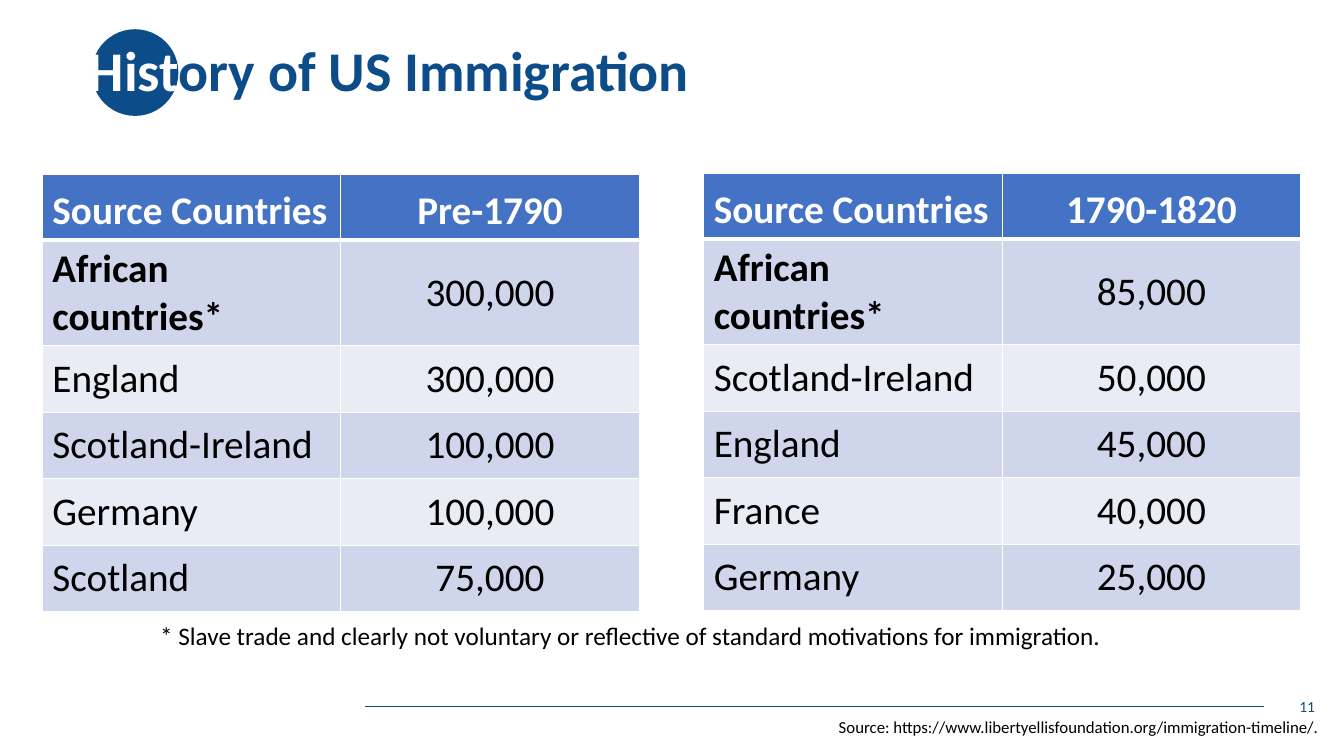
from lxml.etree import SubElement
from pptx import Presentation
from pptx.dml.color import RGBColor
from pptx.enum.shapes import MSO_CONNECTOR, MSO_SHAPE
from pptx.enum.text import MSO_ANCHOR as Anchor, PP_ALIGN as Align
from pptx.oxml.ns import qn
from pptx.util import Pt

NAVY = RGBColor(0x0C, 0x4C, 0x88)
WHITE = RGBColor(0xFF, 0xFF, 0xFF)
BLACK = RGBColor(0, 0, 0)
HEADER_BLUE = RGBColor(0x44, 0x72, 0xC4)
BANDS = [RGBColor(0xE9, 0xEB, 0xF5), RGBColor(0xCF, 0xD5, 0xEA)]
FONT = "Calibri"

TITLE = [("Hist", WHITE), ("ory of US Immigration", NAVY)]
PERIODS = [
    # left, top, height of body rows, rows
    (42, 173, 66, [
        ("Source Countries", "Pre-1790"),
        ("African countries*", "300,000"),
        ("England", "300,000"),
        ("Scotland-Ireland", "100,000"),
        ("Germany", "100,000"),
        ("Scotland", "75,000"),
    ]),
    (698, 172, 66, [
        ("Source Countries", "1790-1820"),
        ("African countries*", "85,000"),
        ("Scotland-Ireland", "50,000"),
        ("England", "45,000"),
        ("France", "40,000"),
        ("Germany", "25,000"),
    ]),
]
CAPTIONS = [
    # text, box, size, colour, alignment, anchor, wrap
    ("11", (1014, 681, 300, 40), 11, NAVY, Align.RIGHT, Anchor.MIDDLE, True),
    ("Source: https://www.libertyellisfoundation.org/immigration-timeline/.",
     (822, 706, 501, 30), 12, BLACK, Align.LEFT, Anchor.TOP, False),
    ("* Slave trade and clearly not voluntary or reflective of standard "
     "motivations for immigration.",
     (149, 611, 958, 40), 18, BLACK, Align.LEFT, Anchor.TOP, False),
]
COLUMN_WIDTH = 296
HEADER_HEIGHT = 65


def px(*lengths):
    """Turn lengths at 100 px to the inch into EMU."""
    return [length * 9144 for length in lengths]


def add_run(paragraph, text, size, color, bold=False):
    run = paragraph.add_run()
    run.text = text
    font = run.font
    font.name, font.size, font.bold = FONT, Pt(size), bold
    font.color.rgb = color


def add_borders(cell, row):
    """Draw white cell borders, thicker between header and body."""
    widths = {"L": 1, "R": 1, "T": 3 if row == 1 else 1, "B": 3 if row == 0 else 1}
    properties = cell._tc.get_or_add_tcPr()
    for side, width in widths.items():
        line = SubElement(properties, qn(f"a:ln{side}"), w=str(Pt(width)))
        fill = SubElement(line, qn("a:solidFill"))
        SubElement(fill, qn("a:srgbClr"), val=str(WHITE))


def add_period(slide, left, top, row_height, rows):
    heights = [HEADER_HEIGHT] + [row_height] * (len(rows) - 1)
    box = px(left, top, 2 * COLUMN_WIDTH, sum(heights))
    table = slide.shapes.add_table(len(rows), 2, *box).table
    for r, (values, height) in enumerate(zip(rows, heights)):
        table.rows[r].height = px(height)[0]
        for c, value in enumerate(values):
            cell = table.cell(r, c)
            add_borders(cell, r)
            cell.fill.solid()
            cell.fill.fore_color.rgb = BANDS[r % 2] if r else HEADER_BLUE
            cell.vertical_anchor = Anchor.MIDDLE if r else Anchor.BOTTOM
            paragraph = cell.text_frame.paragraphs[0]
            paragraph.alignment = Align.CENTER if c else Align.LEFT
            bold = r == 0 or (r == 1 and c == 0)
            add_run(paragraph, value, 28, BLACK if r else WHITE, bold)


def add_caption(slide, text, box, size, color, alignment, anchor, wrap):
    frame = slide.shapes.add_textbox(*px(*box)).text_frame
    frame.word_wrap = wrap
    frame.vertical_anchor = anchor
    paragraph = frame.paragraphs[0]
    paragraph.alignment = alignment
    add_run(paragraph, text, size, color)


def add_title(slide):
    """Fill the title and put its disc behind it."""
    title = slide.shapes.title
    title.left, title.top, title.width, title.height = px(78, 0, 1150, 145)
    title.text_frame.vertical_anchor = Anchor.MIDDLE
    paragraph = title.text_frame.paragraphs[0]
    paragraph.alignment = Align.LEFT
    paragraph.line_spacing = 0.9
    for text, color in TITLE:
        add_run(paragraph, text, 40, color, True)

    disc = slide.shapes.add_shape(MSO_SHAPE.OVAL, *px(91, 29, 86, 86))
    disc.shadow.inherit = False
    disc.fill.solid()
    disc.fill.fore_color.rgb = NAVY
    disc.line.fill.background()
    title._element.addprevious(disc._element)


def add_footer_rule(slide):
    rule = slide.shapes.add_connector(MSO_CONNECTOR.STRAIGHT, *px(362, 701, 1254, 701))
    rule.line.color.rgb = NAVY
    rule.line.width = Pt(0.5)
    SubElement(rule._element.spPr, qn("a:effectLst"))


def main():
    deck = Presentation()
    deck.slide_width, deck.slide_height = px(1333, 750)
    slide = deck.slides.add_slide(deck.slide_layouts[5])
    add_title(slide)
    add_footer_rule(slide)
    for period in PERIODS:
        add_period(slide, *period)
    for caption in CAPTIONS:
        add_caption(slide, *caption)
    deck.save("out.pptx")


if __name__ == "__main__":
    main()
